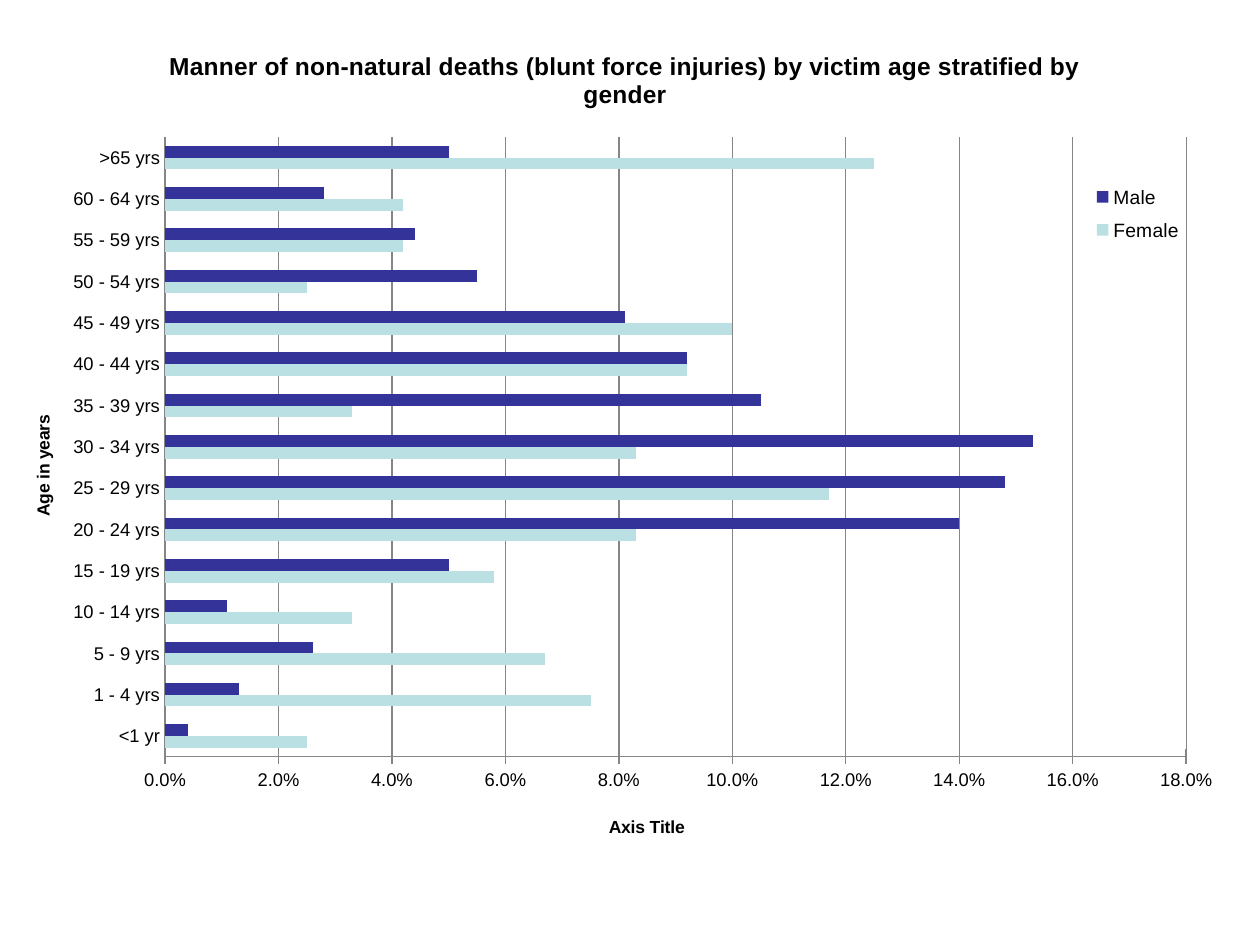
from lxml import etree
from pptx import Presentation
from pptx.chart.data import CategoryChartData
from pptx.dml.color import RGBColor
from pptx.enum.chart import XL_CHART_TYPE, XL_LEGEND_POSITION, XL_TICK_MARK
from pptx.oxml.ns import qn
from pptx.util import Inches, Pt

BAR = XL_CHART_TYPE.BAR_CLUSTERED
RIGHT = XL_LEGEND_POSITION.RIGHT
NO_TICK, CROSS = XL_TICK_MARK.NONE, XL_TICK_MARK.CROSS
FONT = "Arial"
BLACK, GREY = "000000", "868686"

AGES = (["<1 yr", "1 - 4 yrs"]
        + [f"{a} - {a + 4} yrs" for a in range(5, 65, 5)]
        + [">65 yrs"])
SERIES = {
    "Female": ("BBE0E3", [2.5, 7.5, 6.7, 3.3, 5.8, 8.3, 11.7, 8.3,
                          3.3, 9.2, 10, 2.5, 4.2, 4.2, 12.5]),
    "Male": ("333399", [0.4, 1.3, 2.6, 1.1, 5, 14, 14.8, 15.3,
                        10.5, 9.2, 8.1, 5.5, 4.4, 2.8, 5]),
}


def rgb(value):
    return RGBColor.from_string(value)


def style_font(font, size, bold=False):
    font.name, font.size, font.bold = FONT, Pt(size), bold
    font.color.rgb = rgb(BLACK)


def style_line(line):
    line.color.rgb = rgb(GREY)
    line.width = Pt(0.75)


def set_layout(parent, inner=False, **shares):
    """Place a chart part by x, y, w, h given as shares of the chart."""
    for old in parent.findall(qn("c:layout")):
        parent.remove(old)
    layout = etree.Element(qn("c:layout"))
    manual = etree.SubElement(layout, qn("c:manualLayout"))
    if inner:
        etree.SubElement(manual, qn("c:layoutTarget"), val="inner")
    for key in "xy":
        etree.SubElement(manual, qn(f"c:{key}Mode"), val="edge")
    for key, share in shares.items():
        etree.SubElement(manual, qn(f"c:{key}"), val=str(share))
    overlay = parent.find(qn("c:overlay"))
    if overlay is None:
        parent.insert(0, layout)
    else:
        overlay.addprevious(layout)


def set_title(title, text, size):
    p = title.text_frame.paragraphs[0]
    p.text = text
    style_font(p.runs[0].font, size, bold=True)


def style_axis(axis, title, tick, **place):
    axis.major_tick_mark, axis.minor_tick_mark = tick, NO_TICK
    style_font(axis.tick_labels.font, 10.5)
    style_line(axis.format.line)
    set_title(axis.axis_title, title, 10)
    set_layout(axis.axis_title._element, **place)


def add_bar_chart(s):
    data = CategoryChartData(number_format="0.0%")
    data.categories = AGES
    for name, (_, percents) in SERIES.items():
        data.add_series(name, [round(v / 100, 3) for v in percents])
    chart = s.shapes.add_chart(BAR, Inches(0.17), Inches(0.17),
                               Inches(9.58), Inches(7.17), data).chart
    style_font(chart.font, 10)
    plot = chart.plots[0]
    plot.vary_by_categories = False
    plot.gap_width, plot.overlap = 150, 0
    for series in plot.series:
        series.format.fill.solid()
        series.format.fill.fore_color.rgb = rgb(SERIES[series.name][0])
    set_layout(chart._chartSpace.chart.plotArea, inner=True,
               x=0.119, y=0.128, w=0.846, h=0.686)
    return chart


def style_value_axis(axis):
    axis.minimum_scale, axis.maximum_scale, axis.major_unit = 0, 0.18, 0.02
    axis.has_major_gridlines = True
    style_line(axis.major_gridlines.format.line)
    axis.tick_labels.number_format = "0.0%"
    axis.tick_labels.number_format_is_linked = False
    style_axis(axis, "Axis Title", CROSS, x=0.484, y=0.876)


def add_legend(chart):
    chart.has_legend = True
    legend = chart.legend
    legend.position = RIGHT
    legend.include_in_layout = True
    style_font(legend.font, 11)
    set_layout(legend._element, x=0.88, y=0.17, w=0.09, h=0.085)


def main():
    prs = Presentation()
    prs.slide_width, prs.slide_height = Inches(10), Inches(7.5)
    s = prs.slides.add_slide(prs.slide_layouts[6])
    chart = add_bar_chart(s)
    chart.has_title = True
    set_title(chart.chart_title, "Manner of non-natural deaths (blunt force "
              "injuries) by victim age stratified by gender", 14)
    style_axis(chart.category_axis, "Age in years", NO_TICK, x=0.006, y=0.432)
    style_value_axis(chart.value_axis)
    add_legend(chart)
    prs.save("out.pptx")


if __name__ == "__main__":
    main()
